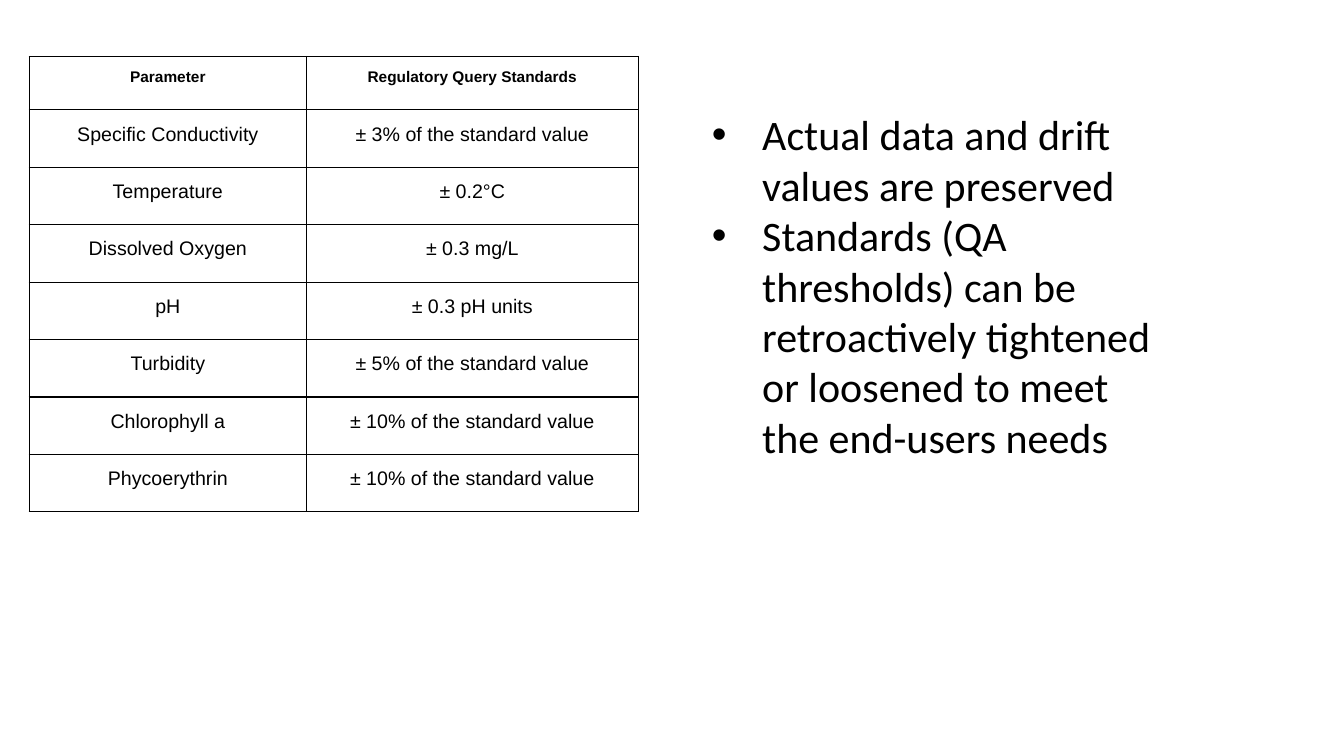
from lxml.etree import SubElement
from pptx import Presentation
from pptx.dml.color import RGBColor
from pptx.enum.text import MSO_ANCHOR, MSO_AUTO_SIZE, PP_ALIGN
from pptx.oxml.ns import qn
from pptx.util import Inches, Pt

BLACK = RGBColor(0x00, 0x00, 0x00)

STANDARDS = [
    ("Parameter", "Regulatory Query Standards"),
    ("Specific Conductivity", "± 3% of the standard value"),
    ("Temperature", "± 0.2°C"),
    ("Dissolved Oxygen", "± 0.3 mg/L"),
    ("pH", "± 0.3 pH units"),
    ("Turbidity", "± 5% of the standard value"),
    ("Chlorophyll a", "± 10% of the standard value"),
    ("Phycoerythrin", "± 10% of the standard value"),
]
BULLETS = [
    "Actual data and drift values are preserved",
    "Standards (QA thresholds) can be retroactively tightened or loosened "
    "to meet the end-users needs",
]
COL_WIDTHS = (2.75, 3.29)
HEADER_HEIGHT, ROW_HEIGHT = 0.53, 0.57

CELL_FORMAT = {
    "margin_left": Inches(0.07), "margin_right": Inches(0.07),
    "margin_top": Inches(0.1), "margin_bottom": Inches(0.1),
    "vertical_anchor": MSO_ANCHOR.TOP,
}
CELL_PARAGRAPH = {
    "alignment": PP_ALIGN.CENTER, "line_spacing": 1.15,
    "space_before": Pt(12), "space_after": Pt(12),
}
BODY_FRAME = {
    "word_wrap": True, "auto_size": MSO_AUTO_SIZE.NONE,
    "vertical_anchor": MSO_ANCHOR.TOP,
    "margin_left": Inches(0.1), "margin_right": Inches(0.1),
    "margin_top": Inches(0.05), "margin_bottom": Inches(0.05),
}


def apply(target, values):
    for name, value in values.items():
        setattr(target, name, value)


def add_run(p, text, font, size, bold=False):
    r = p.add_run()
    r.text = text
    apply(r.font, {"name": font, "size": Pt(size), "bold": bold})
    r.font.color.rgb = BLACK


def add_color(parent, tag):
    SubElement(SubElement(parent, qn(tag)), qn("a:srgbClr"), val=str(BLACK))


def add_borders(cell):
    tcPr = cell._tc.get_or_add_tcPr()
    for side in ("a:lnL", "a:lnR", "a:lnT", "a:lnB"):
        add_color(SubElement(tcPr, qn(side), w=str(Pt(1))), "a:solidFill")


def add_standards_table(s):
    heights = [HEADER_HEIGHT] + [ROW_HEIGHT] * (len(STANDARDS) - 1)
    table = s.shapes.add_table(
        len(STANDARDS), len(COL_WIDTHS), Inches(0.29), Inches(0.56),
        Inches(sum(COL_WIDTHS)), Inches(sum(heights))).table
    apply(table, {"first_row": False, "horz_banding": False})
    for column, width in zip(table.columns, COL_WIDTHS):
        column.width = Inches(width)
    for i, (texts, height) in enumerate(zip(STANDARDS, heights)):
        table.rows[i].height = Inches(height)
        for j, text in enumerate(texts):
            cell = table.cell(i, j)
            apply(cell, CELL_FORMAT)
            add_borders(cell)
            cell.fill.background()
            p = cell.text_frame.paragraphs[0]
            apply(p, CELL_PARAGRAPH)
            add_run(p, text, "Arial", 11 if i == 0 else 14, bold=i == 0)


def add_bullets(body):
    apply(body, {"left": Inches(6.96), "top": Inches(1.03),
                 "width": Inches(4.67), "height": Inches(4.76)})
    tf = body.text_frame
    apply(tf, BODY_FRAME)
    for i, text in enumerate(BULLETS):
        p = tf.add_paragraph() if i else tf.paragraphs[0]
        apply(p, {"line_spacing": 1.0, "space_after": Pt(0),
                  "space_before": Pt(0 if i else 16), "alignment": PP_ALIGN.LEFT})
        pPr = p._p.get_or_add_pPr()
        pPr.set("marL", str(Inches(0.5)))
        pPr.set("indent", str(Inches(-0.56)))
        add_color(pPr, "a:buClr")
        SubElement(pPr, qn("a:buFont"), typeface="Arial")
        SubElement(pPr, qn("a:buChar"), char="•")
        add_run(p, text, "Calibri", 30)


def main():
    prs = Presentation()
    prs.slide_width, prs.slide_height = Inches(13.33), Inches(7.5)
    s = prs.slides.add_slide(prs.slide_layouts[1])
    title = s.shapes.title._element
    title.getparent().remove(title)
    add_standards_table(s)
    add_bullets(s.placeholders[1])
    prs.save("out.pptx")


if __name__ == "__main__":
    main()
